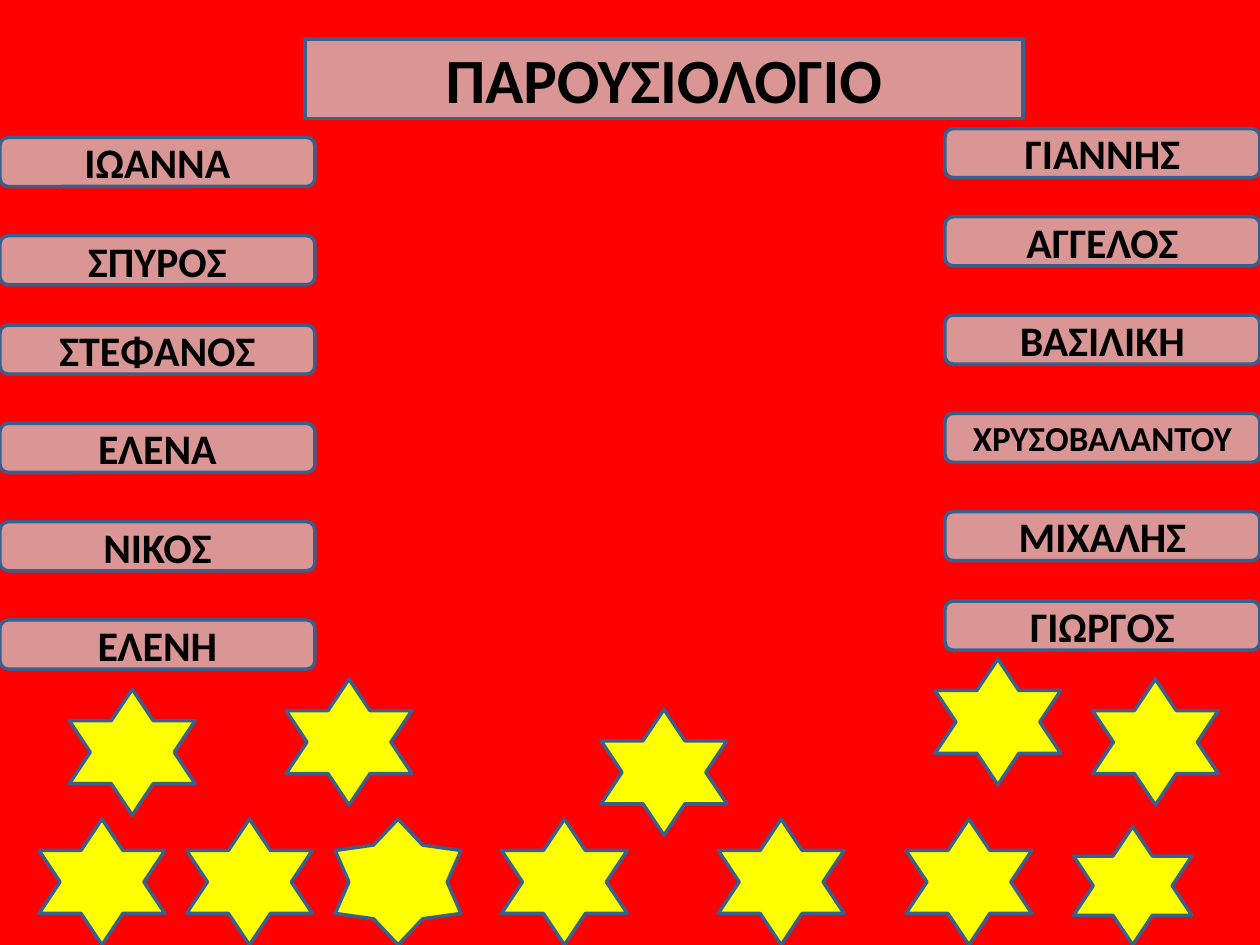
from lxml import etree
from pptx import Presentation
from pptx.dml.color import RGBColor
from pptx.enum.shapes import MSO_SHAPE
from pptx.enum.text import MSO_ANCHOR, MSO_AUTO_SIZE, PP_ALIGN
from pptx.oxml.ns import qn
from pptx.util import Inches, Pt

COLORS = {"background": "FF0000", "label": "D99694", "star": "FFFF00",
          "outline": "3A5F8C", "text": "000000"}

TITLE = "ΠΑΡΟΥΣΙΟΛΟΓΙΟ"
TITLE_BOX = (2.42, 0.31, 5.7, 0.63)
NAME_WIDTH, NAME_HEIGHT = 2.5, 0.39
NAME_SIZE, LONG_NAME_SIZE = 24, 20
LONG_NAME_LENGTH = 12

# Each column: left edge, then (name, top)
NAME_COLUMNS = [
    (0, [("ΙΩΑΝΝΑ", 1.09), ("ΣΠΥΡΟΣ", 1.87), ("ΣΤΕΦΑΝΟΣ", 2.58),
         ("ΕΛΕΝΑ", 3.36), ("ΝΙΚΟΣ", 4.14), ("ΕΛΕΝΗ", 4.92)]),
    (7.5, [("ΓΙΑΝΝΗΣ", 1.02), ("ΑΓΓΕΛΟΣ", 1.72), ("ΒΑΣΙΛΙΚΗ", 2.5),
           ("ΧΡΥΣΟΒΑΛΑΝΤΟΥ", 3.28), ("ΜΙΧΑΛΗΣ", 4.06), ("ΓΙΩΡΓΟΣ", 4.77)]),
]

STAR_SIZE, SMALL_STAR_SIZE = 1, 0.94
BOTTOM_ROW = 7.5 - STAR_SIZE
STARS = [(left, BOTTOM_ROW) for left in (0.31, 1.48, 3.98, 5.7, 7.19)] + [
    (0.55, 5.47), (2.27, 5.39), (4.77, 5.63), (7.42, 5.23), (8.67, 5.39)]
BLUNT_STAR = (2.66, BOTTOM_ROW)
SMALL_STAR = (8.52, 7.5 - SMALL_STAR_SIZE)


def rgb(role):
    return RGBColor.from_string(COLORS[role])


def paint(shape, role):
    shape.fill.solid()
    shape.fill.fore_color.rgb = rgb(role)
    shape.line.color.rgb = rgb("outline")
    shape.line.width = Pt(2)


def add_shape(slide, kind, box, role):
    shape = slide.shapes.add_shape(kind, *map(Inches, box))
    shape.shadow.inherit = False
    paint(shape, role)
    return shape


def write(shape, text, size):
    frame = shape.text_frame
    frame.text = text
    frame_format = {"word_wrap": True, "auto_size": MSO_AUTO_SIZE.NONE,
                    "vertical_anchor": MSO_ANCHOR.MIDDLE}
    for attribute, value in frame_format.items():
        setattr(frame, attribute, value)
    paragraph = frame.paragraphs[0]
    paragraph.alignment = PP_ALIGN.CENTER
    font = paragraph.runs[0].font
    for attribute, value in {"name": "Calibri", "size": Pt(size), "bold": True}.items():
        setattr(font, attribute, value)
    font.color.rgb = rgb("text")


def add_title(slide):
    title = slide.shapes.title
    for side, value in zip(("left", "top", "width", "height"), TITLE_BOX):
        setattr(title, side, Inches(value))
    # A placeholder takes its rounded outline from XML
    outline = etree.SubElement(title.element.spPr, qn("a:prstGeom"), prst="roundRect")
    etree.SubElement(outline, qn("a:avLst"))
    paint(title, "label")
    write(title, TITLE, 36)


def add_names(slide):
    for left, names in NAME_COLUMNS:
        for name, top in names:
            label = add_shape(slide, MSO_SHAPE.ROUNDED_RECTANGLE,
                              (left, top, NAME_WIDTH, NAME_HEIGHT), "label")
            write(label, name, LONG_NAME_SIZE if len(name) > LONG_NAME_LENGTH else NAME_SIZE)


def add_star(slide, position, size=STAR_SIZE):
    return add_shape(slide, MSO_SHAPE.STAR_6_POINT, (*position, size, size), "star")


def main():
    presentation = Presentation()
    presentation.slide_width, presentation.slide_height = Inches(10), Inches(7.5)
    slide = presentation.slides.add_slide(presentation.slide_layouts.get_by_name("Title Only"))
    slide.background.fill.solid()
    slide.background.fill.fore_color.rgb = rgb("background")

    add_title(slide)
    add_names(slide)
    for position in STARS:
        add_star(slide, position)
    add_star(slide, BLUNT_STAR).adjustments[0] = 0.338
    add_star(slide, SMALL_STAR, SMALL_STAR_SIZE)
    presentation.save("out.pptx")


if __name__ == "__main__":
    main()
